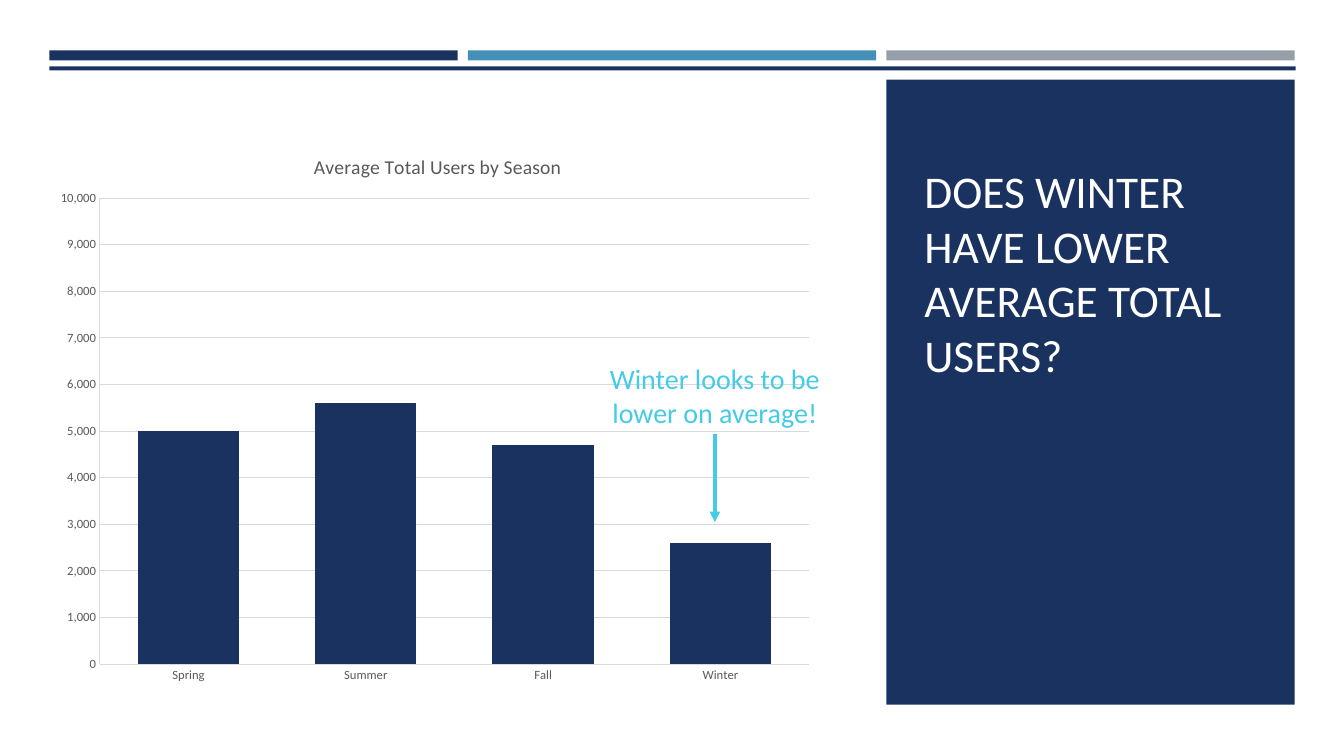
from lxml import etree
from pptx import Presentation
from pptx.chart.data import CategoryChartData
from pptx.dml.color import RGBColor
from pptx.enum.chart import XL_CHART_TYPE, XL_TICK_MARK
from pptx.enum.shapes import MSO_CONNECTOR, MSO_SHAPE
from pptx.enum.text import MSO_ANCHOR, PP_ALIGN
from pptx.oxml import parse_xml
from pptx.oxml.ns import nsdecls, qn
from pptx.util import Inches, Pt

COLUMNS = XL_CHART_TYPE.COLUMN_CLUSTERED
NO_TICK = XL_TICK_MARK.NONE
STRAIGHT = MSO_CONNECTOR.STRAIGHT
RECTANGLE = MSO_SHAPE.RECTANGLE
TOP, BOTTOM = MSO_ANCHOR.TOP, MSO_ANCHOR.BOTTOM
LEFT, CENTER = PP_ALIGN.LEFT, PP_ALIGN.CENTER

FONT = "Calibri"
NAVY, BLUE, GREY, CYAN = "1A3260", "4590B8", "969FA7", "45CBE8"
WHITE, RULE, LABEL = "FFFFFF", "D9D9D9", "595959"
MARGIN, COLUMN_WIDTH, COLUMN_STEP = 0.49, 4.05, 4.15


def rgb(color):
    return RGBColor.from_string(color)


def style_font(font, size, color):
    font.name = FONT
    font.size = Pt(size)
    font.bold = False
    font.color.rgb = rgb(color)


def style_line(line, color, width):
    line.color.rgb = rgb(color)
    line.width = Pt(width)


def add_block(slide, left, top, width, height, color):
    block = slide.shapes.add_shape(
        RECTANGLE, Inches(left), Inches(top), Inches(width), Inches(height))
    block.shadow.inherit = False
    block.fill.solid()
    block.fill.fore_color.rgb = rgb(color)
    block.line.fill.background()


def add_text(slide, text, left, top, width, height, *, size, color,
             align=LEFT, anchor=TOP, wrap=True):
    box = slide.shapes.add_textbox(
        Inches(left), Inches(top), Inches(width), Inches(height))
    frame = box.text_frame
    frame.word_wrap = wrap
    frame.vertical_anchor = anchor
    paragraph = frame.paragraphs[0]
    paragraph.text = text
    paragraph.alignment = align
    style_font(paragraph.font, size, color)
    for run in paragraph.runs:
        style_font(run.font, size, color)


def add_arrow(slide, x, top, bottom, color, width):
    arrow = slide.shapes.add_connector(
        STRAIGHT, Inches(x), Inches(top), Inches(x), Inches(bottom))
    style_line(arrow.line, color, width)
    etree.SubElement(arrow.line._get_or_add_ln(), qn("a:tailEnd"), type="triangle")
    etree.SubElement(arrow._element.spPr, qn("a:effectLst"))


def chart_layout(target="", **fractions):
    inner = f'<c:layoutTarget val="{target}"/>' if target else ""
    modes = "".join(f'<c:{key}Mode val="edge"/>' for key in ("x", "y"))
    values = "".join(f'<c:{key} val="{value}"/>' for key, value in fractions.items())
    return parse_xml(
        f'<c:layout {nsdecls("c")}><c:manualLayout>{inner}{modes}{values}'
        '</c:manualLayout></c:layout>')


def place(parent, layout):
    for previous in parent.findall(qn("c:layout")):
        parent.remove(previous)
    text = parent.find(qn("c:tx"))
    if text is None:
        parent.insert(0, layout)
    else:
        text.addnext(layout)


def style_axis(axis):
    axis.major_tick_mark = NO_TICK
    axis.minor_tick_mark = NO_TICK
    style_font(axis.tick_labels.font, 9, LABEL)
    style_line(axis.format.line, RULE, 0.75)


def add_season_chart(slide, left, top, width, height):
    seasons = CategoryChartData(number_format="#,##0")
    seasons.categories = ["Spring", "Summer", "Fall", "Winter"]
    seasons.add_series("Average Total Users", [5000, 5600, 4700, 2600])
    chart = slide.shapes.add_chart(
        COLUMNS, Inches(left), Inches(top), Inches(width), Inches(height), seasons).chart
    style_font(chart.font, 10, LABEL)
    chart.has_legend = False
    chart.has_title = True
    heading = chart.chart_title.text_frame.paragraphs[0]
    heading.text = "Average Total Users by Season"
    style_font(heading.runs[0].font, 14, LABEL)
    place(chart.chart_title._element, chart_layout(x=0.34, y=0.04))
    place(chart._chartSpace.chart.plotArea,
          chart_layout("inner", x=0.07, y=0.125, w=0.91, h=0.82))

    style_axis(chart.category_axis)
    users = chart.value_axis
    style_axis(users)
    users.minimum_scale = 0
    users.maximum_scale = 10000
    users.major_unit = 1000
    users.tick_labels.number_format = "#,##0"
    users.tick_labels.number_format_is_linked = False
    style_line(users.major_gridlines.format.line, RULE, 0.75)

    plot = chart.plots[0]
    plot.vary_by_categories = False
    plot.gap_width = 75
    plot.overlap = -25
    bars = plot.series[0].format.fill
    bars.solid()
    bars.fore_color.rgb = rgb(NAVY)


def main():
    deck = Presentation()
    deck.slide_width, deck.slide_height = Inches(13.33), Inches(7.5)
    slide = deck.slides.add_slide(deck.slide_layouts[6])

    for column, color in enumerate((NAVY, BLUE, GREY)):
        add_block(slide, MARGIN + column * COLUMN_STEP, 0.5, COLUMN_WIDTH, 0.1, color)
    add_block(slide, MARGIN, 0.66, 12.36, 0.04, NAVY)
    add_block(slide, MARGIN + 2 * COLUMN_STEP, 0.79, COLUMN_WIDTH, 6.2, NAVY)
    add_text(slide, "DOES WINTER HAVE LOWER AVERAGE TOTAL USERS?",
             9.07, 1.55, 3.37, 2.28, size=32.4, color=WHITE, anchor=BOTTOM)
    add_season_chart(slide, 0.45, 1.26, 7.73, 5.64)
    add_text(slide, "Winter looks to be\vlower on average!",
             5.89, 3.54, 2.4, 0.77, size=20, color=CYAN, align=CENTER, wrap=False)
    add_arrow(slide, 7.09, 4.31, 5.18, CYAN, 2.5)
    deck.save("out.pptx")


if __name__ == "__main__":
    main()
